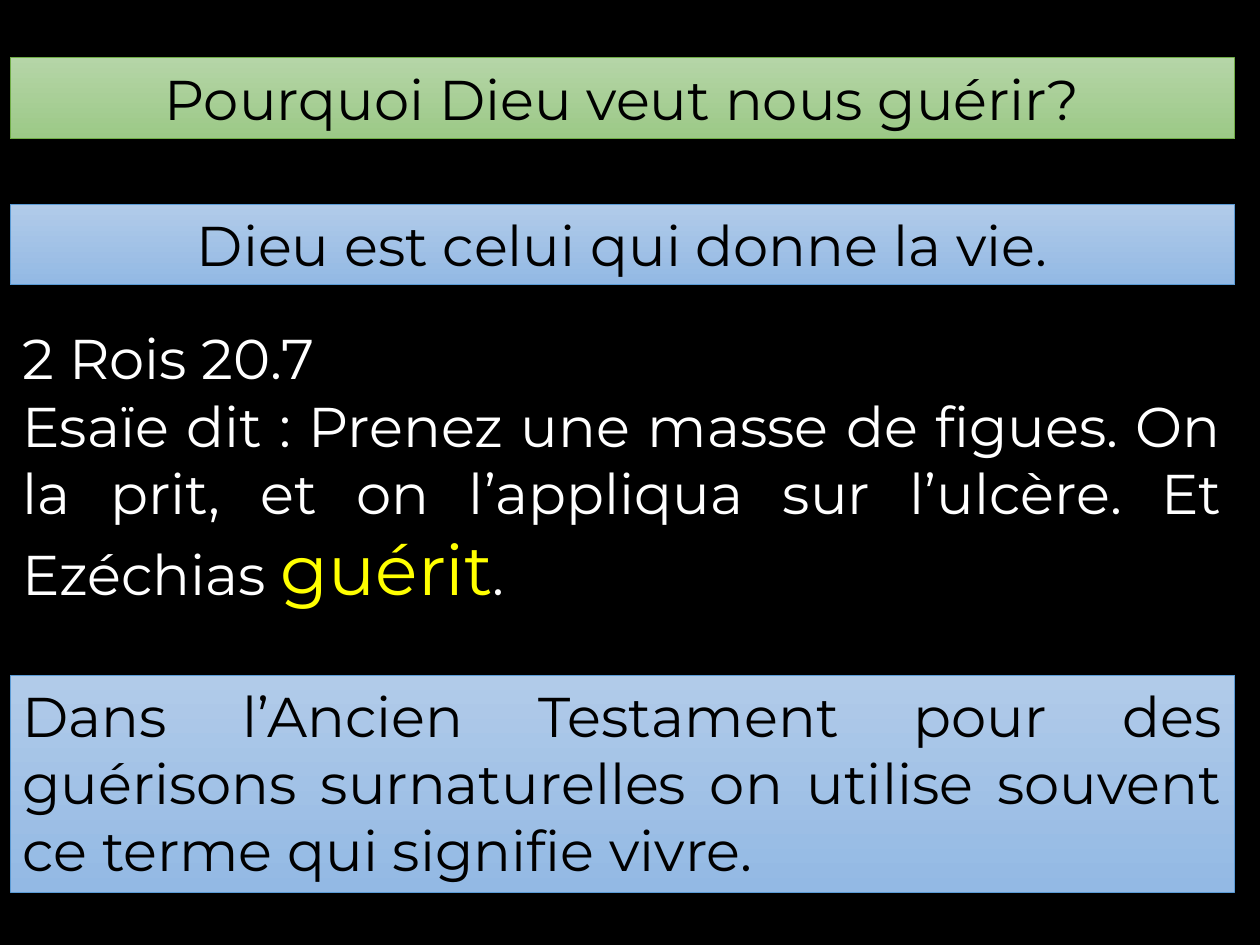
from dataclasses import dataclass

from lxml.etree import SubElement
from pptx import Presentation
from pptx.dml.color import RGBColor as Rgb
from pptx.enum.shapes import MSO_SHAPE as Shape
from pptx.enum.text import MSO_ANCHOR as Anchor, MSO_AUTO_SIZE as Fit, PP_ALIGN as Align
from pptx.oxml.ns import qn
from pptx.util import Inches, Pt


@dataclass(frozen=True)
class Theme:
    font: str = "Montserrat"
    size: int = 32
    big: int = 40
    back: str = "000000"
    dark: str = "000000"
    light: str = "FFFFFF"
    mark: str = "FFFF00"
    # Gradient top, gradient bottom, outline
    green: tuple = ("B5D5A7", "9CC987", "70AD47")
    blue: tuple = ("B1CBE9", "93B9E4", "5B9BD5")


THEME = Theme()
LEFT, WIDTH = 0.08, 9.72


def color(code):
    return Rgb.from_string(code)


def place(shape, top, height):
    shape.left, shape.top = Inches(LEFT), Inches(top)
    shape.width, shape.height = Inches(WIDTH), Inches(height)


def paint(shape, tones):
    """Give the shape a top-to-bottom gradient and a thin outline."""
    *ends, edge = tones
    shape.fill.gradient()
    shape.fill.gradient_angle = 270
    for stop, tone in zip(shape.fill.gradient_stops, ends):
        stop.color.rgb = color(tone)
    shape.line.color.rgb = color(edge)
    shape.line.width = Pt(0.5)


def write(shape, paras, align, ink):
    """Fill in paragraphs, each a list of (text, is_marked) runs."""
    frame = shape.text_frame
    frame.word_wrap = True
    frame.auto_size = Fit.NONE
    frame.vertical_anchor = Anchor.TOP
    for i, runs in enumerate(paras):
        para = frame.paragraphs[0] if i == 0 else frame.add_paragraph()
        props = para._p.get_or_add_pPr()
        props.set("marL", "0")
        props.set("indent", "0")
        SubElement(props, qn("a:buNone"))
        para.alignment = align
        para.space_before = Pt(0)
        para.font.name = THEME.font
        para.font.size = Pt(THEME.size)
        para.font.color.rgb = color(ink)
        for text, marked in runs:
            run = para.add_run()
            run.text = text
            if marked:
                run.font.size = Pt(THEME.big)
                run.font.color.rgb = color(THEME.mark)


def add_panel(slide, top, height, text, align):
    panel = slide.shapes.add_shape(
        Shape.RECTANGLE, Inches(LEFT), Inches(top), Inches(WIDTH), Inches(height))
    panel.shadow.inherit = False
    paint(panel, THEME.blue)
    write(panel, [[(text, False)]], align, THEME.dark)


def set_title(slide, text):
    title = slide.shapes.title
    place(title, 0.46, 0.64)
    paint(title, THEME.green)
    write(title, [[(text, False)]], Align.CENTER, THEME.dark)


def set_verse(slide, paras):
    body = slide.placeholders[1]
    place(body, 2.52, 2.39)
    write(body, paras, Align.JUSTIFY, THEME.light)


def main():
    deck = Presentation()
    deck.slide_width, deck.slide_height = Inches(10), Inches(7.5)
    slide = deck.slides.add_slide(deck.slide_layouts[1])
    slide.background.fill.solid()
    slide.background.fill.fore_color.rgb = color(THEME.back)

    set_title(slide, "Pourquoi Dieu veut nous guérir?")
    add_panel(slide, 1.62, 0.64, "Dieu est celui qui donne la vie.", Align.CENTER)
    set_verse(slide, [
        [("2 Rois 20.7", False)],
        [("Esaïe dit : Prenez une masse de figues. On la prit, "
          "et on l’appliqua sur l’ulcère. Et Ezéchias ", False),
         ("guérit", True),
         (".", False)],
    ])
    add_panel(slide, 5.36, 1.72,
              "Dans l’Ancien Testament pour des guérisons surnaturelles "
              "on utilise souvent ce terme qui signifie vivre.", Align.JUSTIFY)
    deck.save("out.pptx")


if __name__ == "__main__":
    main()
